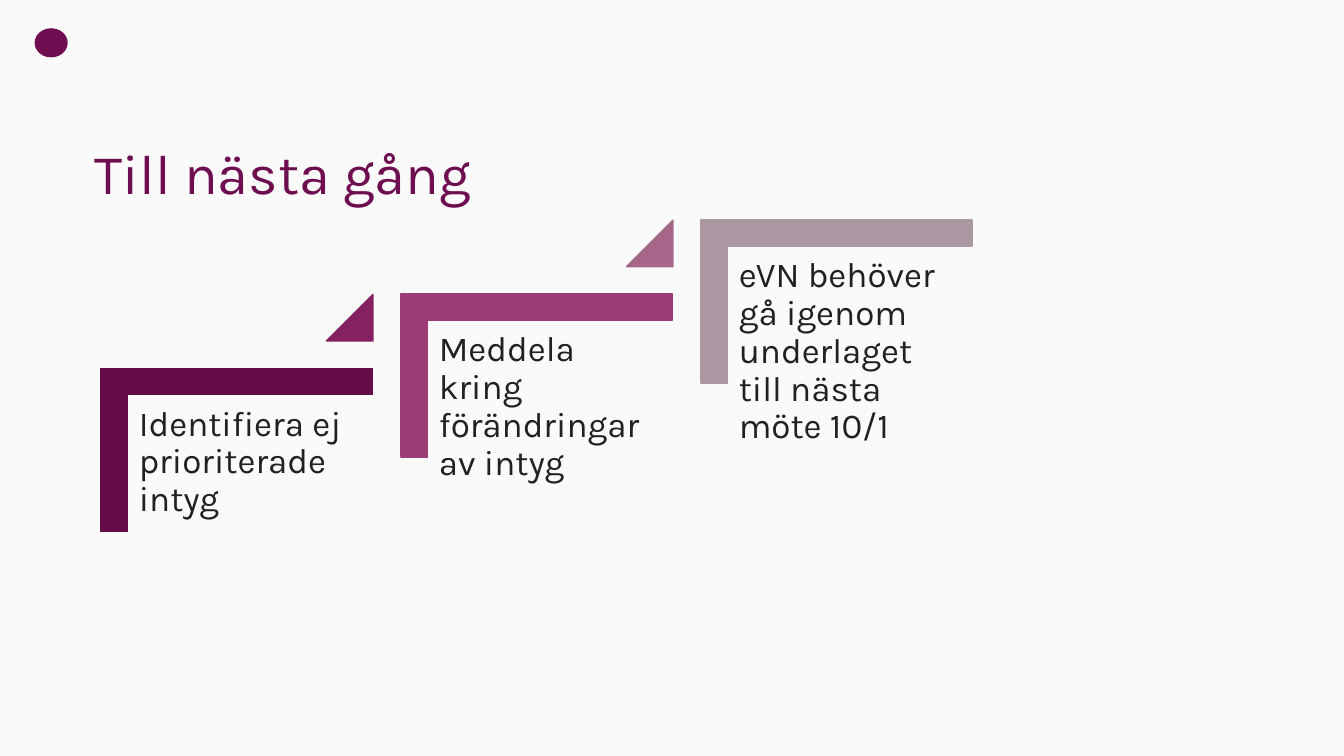
from pptx import Presentation
from pptx.dml.color import RGBColor
from pptx.enum.shapes import MSO_SHAPE
from pptx.enum.text import MSO_ANCHOR, MSO_AUTO_SIZE, PP_ALIGN
from pptx.util import Cm, Pt

PAPER = RGBColor(0xFA, 0xFA, 0xFA)
PLUM = RGBColor(0x6E, 0x0E, 0x50)
INK = RGBColor(0x21, 0x21, 0x21)
DARK_PLUM = RGBColor(0x64, 0x0D, 0x49)
DEEP_PINK = RGBColor(0x85, 0x21, 0x61)
MID_PINK = RGBColor(0x9C, 0x3D, 0x77)
SOFT_PINK = RGBColor(0xA7, 0x67, 0x8B)
GREY_PINK = RGBColor(0xAB, 0x98, 0xA2)


def paint(part, color):
    part.shadow.inherit = False
    part.fill.solid()
    part.fill.fore_color.rgb = color
    part.line.color.rgb = color
    part.line.width = Pt(1)


def write(frame, text, size, color, frame_format):
    for attribute, value in frame_format.items():
        setattr(frame, attribute, value)
    paragraph = frame.paragraphs[0]
    paragraph.alignment = PP_ALIGN.LEFT
    paragraph.line_spacing = 0.9
    run = paragraph.add_run()
    run.text = text
    for attribute, value in {"name": "Karla", "size": Pt(size)}.items():
        setattr(run.font, attribute, value)
    run.font.color.rgb = color


presentation = Presentation()
presentation.slide_width = Cm(33.87)
presentation.slide_height = Cm(19.05)
slide = presentation.slides.add_slide(presentation.slide_layouts[5])
slide.background.fill.solid()
slide.background.fill.fore_color.rgb = PAPER

emblem = slide.shapes.add_shape(MSO_SHAPE.OVAL, Cm(0.89), Cm(0.73), Cm(0.8), Cm(0.7))
paint(emblem, PLUM)

heading = slide.shapes.title
heading_place = {"left": Cm(2.39), "top": Cm(3.66), "width": Cm(29.11), "height": Cm(1.55)}
for attribute, value in heading_place.items():
    setattr(heading, attribute, value)
margins = ("margin_left", "margin_top", "margin_right", "margin_bottom")
heading_format = {
    **dict.fromkeys(margins, 0),
    "word_wrap": True,
    "vertical_anchor": MSO_ANCHOR.BOTTOM,
    "auto_size": MSO_AUTO_SIZE.SHAPE_TO_FIT_TEXT,
}
write(heading.text_frame, "Till nästa gång", 40, PLUM, heading_format)

step_format = {
    **dict.fromkeys(margins, Cm(0.25)),
    "margin_right": Cm(0.35),
    "word_wrap": True,
    "vertical_anchor": MSO_ANCHOR.TOP,
    "auto_size": MSO_AUTO_SIZE.NONE,
}
steps = [
    ("Identifiera ej prioriterade intyg", DARK_PLUM, DEEP_PINK),
    ("Meddela kring förändringar av intyg", MID_PINK, SOFT_PINK),
    ("eVN behöver gå igenom underlaget till nästa möte 10/1", GREY_PINK, None),
]
for index, (task, stair_color, rise_color) in enumerate(steps):
    across = 7.56 * index
    up = 1.87 * index

    stair = slide.shapes.add_shape(
        MSO_SHAPE.CORNER, Cm(3.91 + across), Cm(7.92 - up), Cm(4.11), Cm(6.83))
    stair.rotation = 90
    stair.adjustments[0] = 0.16
    stair.adjustments[1] = 0.16
    paint(stair, stair_color)

    task_box = slide.shapes.add_textbox(
        Cm(3.25 + across), Cm(9.98 - up), Cm(6.17), Cm(5.41))
    write(task_box.text_frame, task, 25, INK, step_format)

    if rise_color is not None:
        rise = slide.shapes.add_shape(
            MSO_SHAPE.ISOSCELES_TRIANGLE, Cm(8.23 + across), Cm(7.42 - up), Cm(1.17), Cm(1.17))
        rise.adjustments[0] = 1
        paint(rise, rise_color)

presentation.save("out.pptx")
